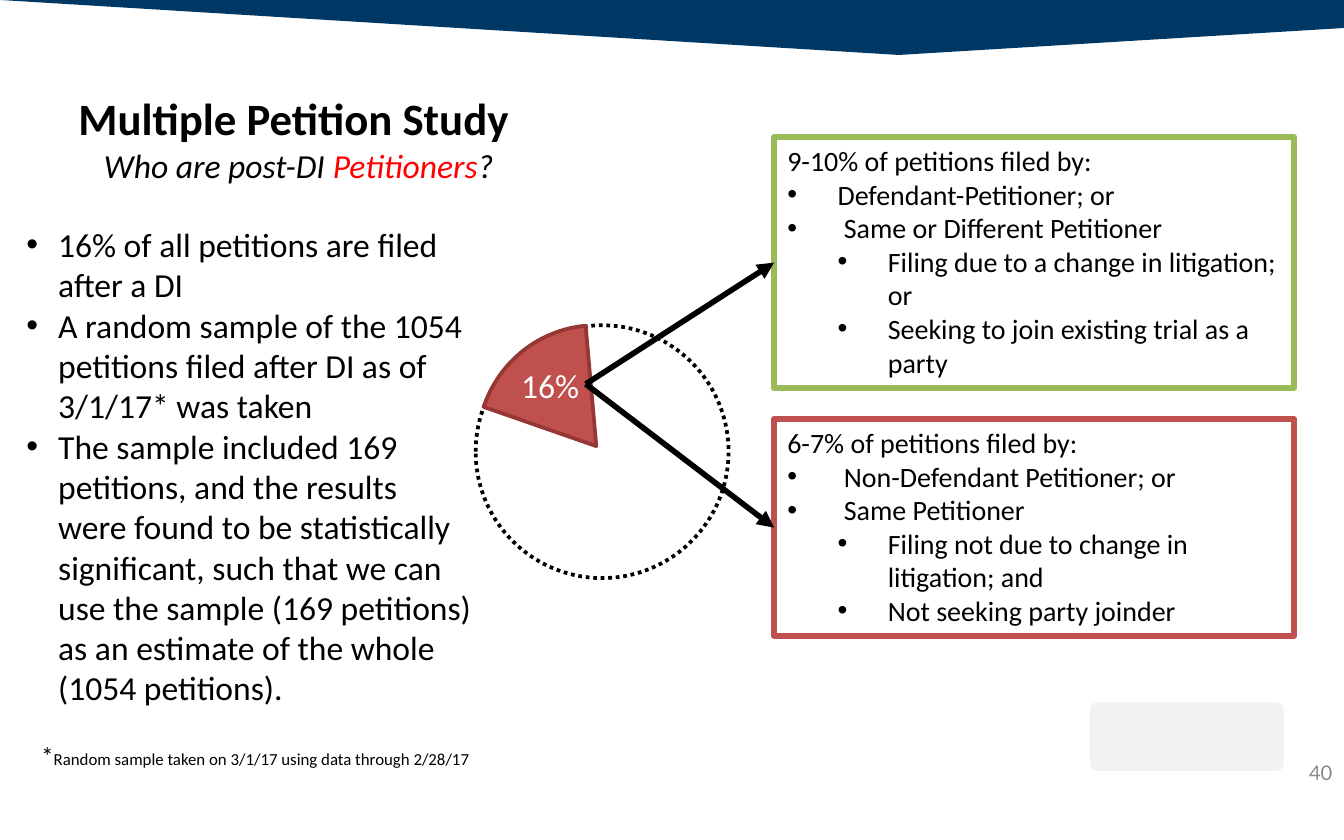
from lxml.etree import SubElement
from pptx import Presentation
from pptx.dml.color import RGBColor
from pptx.enum.dml import MSO_LINE_DASH_STYLE as Dash
from pptx.enum.shapes import MSO_CONNECTOR as Connector, MSO_SHAPE as Shape
from pptx.enum.text import MSO_ANCHOR as Anchor, PP_ALIGN as Align
from pptx.oxml.ns import qn
from pptx.util import Cm, Pt

BLACK, WHITE, RED = "000000", "FFFFFF", "FF0000"
NAVY, BRICK, DARK_BRICK, GREEN = "003865", "C0504D", "953735", "9BBB59"
PALE, GREY = "F2F2F2", "8A8A8A"

# A run is (text, formatting); a paragraph is a list of runs.
TITLE = [
    [("Multiple Petition Study ", dict(size=24, bold=True))],
    [("Who are post-DI ", dict(italic=True)),
     ("Petitioners", dict(italic=True, color=RED)),
     ("?", dict(italic=True))],
]
FINDINGS = [
    "16% of all petitions are filed after a DI",
    "A random sample of the 1054 petitions filed after DI as of 3/1/17* was taken",
    "The sample included 169 petitions, and the results were found to be "
    "statistically significant, such that we can use the sample (169 petitions) "
    "as an estimate of the whole (1054 petitions).",
]
FOOTNOTE = [[("*", dict(size=13.5)),
             ("Random sample taken on 3/1/17 using data through 2/28/17", dict(size=9))]]

# Each group: border colour, top, height, heading, bullets, sub-bullets
GROUPS = [
    (GREEN, 2.59, 4.75, "9-10% of petitions filed by:",
     ["Defendant-Petitioner; or", " Same or Different Petitioner"],
     ["Filing due to a change in litigation; or",
      "Seeking to join existing trial as a party"]),
    (BRICK, 7.92, 4.11, "6-7% of petitions filed by:",
     [" Non-Defendant Petitioner; or", " Same Petitioner"],
     ["Filing not due to change in litigation; and", "Not seeking party joinder"]),
]
GROUP_LEFT, GROUP_WIDTH, GROUP_INDENT = 14.63, 9.83, 0.95
BAND = [(0, 0), (25.4, 0), (25.4, 0.53), (16.99, 1.04)]
ARROW_START = Cm(11.07), Cm(7.26)
PIE_ANGLES = 199.2, 264.98


def rgb(color):
    return RGBColor.from_string(color)


def paint(shape, fill=None, line=None, width=2):
    shape.shadow.inherit = False
    if fill:
        shape.fill.solid()
        shape.fill.fore_color.rgb = rgb(fill)
    else:
        shape.fill.background()
    if line:
        shape.line.color.rgb = rgb(line)
        shape.line.width = Pt(width)
    else:
        shape.line.fill.background()


def add_shape(slide, kind, box, **style):
    shape = slide.shapes.add_shape(kind, *map(Cm, box))
    paint(shape, **style)
    return shape


def write(frame, paragraphs, size=18, color=BLACK, font="Calibri", align=Align.LEFT):
    frame.word_wrap = True
    frame.vertical_anchor = Anchor.TOP
    for number, runs in enumerate(paragraphs):
        paragraph = frame.add_paragraph() if number else frame.paragraphs[0]
        paragraph.alignment = align
        for text, style in runs:
            run = paragraph.add_run()
            run.text = text
            run.font.name = font
            run.font.size = Pt(style.get("size", size))
            run.font.bold = style.get("bold", False)
            run.font.italic = style.get("italic", False)
            run.font.color.rgb = rgb(style.get("color", color))


def add_text(slide, box, paragraphs, **style):
    frame = slide.shapes.add_textbox(*map(Cm, box)).text_frame
    write(frame, paragraphs, **style)
    return frame


def plain(texts):
    return [[(text, {})] for text in texts]


def add_bullet(paragraph, indent, level=0):
    paragraph.level = level
    properties = paragraph._p.get_or_add_pPr()
    properties.set("marL", str(Cm(indent * (level + 1))))
    properties.set("indent", str(-Cm(indent)))
    SubElement(properties, qn("a:buFont"), typeface="Arial")
    SubElement(properties, qn("a:buChar"), char="•")


def add_arrow(slide, target):
    """Draw an arrow from the pie slice to the left side of the target."""
    arrow = slide.shapes.add_connector(Connector.STRAIGHT, *ARROW_START, *ARROW_START)
    arrow.end_connect(target, 1)
    arrow.line.color.rgb = rgb(BLACK)
    arrow.line.width = Pt(3)
    SubElement(arrow.line._get_or_add_ln(), qn("a:tailEnd"), type="triangle")
    SubElement(arrow._element.spPr, qn("a:effectLst"))


def add_group(slide, color, top, height, heading, bullets, sub_bullets):
    box = GROUP_LEFT, top, GROUP_WIDTH, height
    group = add_shape(slide, Shape.RECTANGLE, box, line=color, width=3)
    write(group.text_frame, plain([heading, *bullets, *sub_bullets]), size=15)
    levels = [0] * len(bullets) + [1] * len(sub_bullets)
    for paragraph, level in zip(group.text_frame.paragraphs[1:], levels):
        add_bullet(paragraph, GROUP_INDENT, level)
    return group


def main():
    presentation = Presentation()
    presentation.slide_width, presentation.slide_height = Cm(25.4), Cm(15.88)
    slide = presentation.slides.add_slide(presentation.slide_layouts[6])

    corners = [(Cm(x), Cm(y)) for x, y in BAND]
    builder = slide.shapes.build_freeform(*corners[0])
    builder.add_line_segments(corners[1:])
    paint(builder.convert_to_shape(), fill=NAVY)
    emblem = add_shape(slide, Shape.ROUNDED_RECTANGLE, (20.6, 13.28, 3.66, 1.3), fill=PALE)
    emblem.adjustments[0] = 0.1

    circle = add_shape(slide, Shape.OVAL, (8.99, 6.15, 4.78, 4.78), line=BLACK)
    circle.line.dash_style = Dash.ROUND_DOT
    pie = add_shape(slide, Shape.PIE, (9.02, 6.15, 4.5, 4.57), fill=BRICK, line=DARK_BRICK)
    for number, angle in enumerate(PIE_ANGLES):
        pie.adjustments[number] = angle * 0.6  # 60000ths of a degree over 100000

    add_text(slide, (-1.63, 1.6, 14.55, 3.07), TITLE, align=Align.CENTER)
    add_text(slide, (0.53, 13.87, 20.19, 0.84), FOOTNOTE)
    page = add_text(slide, (24.46, 14.38, 0.94, 0.46), plain(["40"]),
                    size=10.8, color=GREY, font="Lato")
    page.margin_left = Cm(0.28)
    page.margin_top = page.margin_right = page.margin_bottom = 0

    findings = add_text(slide, (0.25, 4.11, 8.92, 9.5), plain(FINDINGS))
    for paragraph in findings.paragraphs:
        add_bullet(paragraph, 0.6)

    for group in [add_group(slide, *group) for group in GROUPS]:
        add_arrow(slide, group)
    label = add_text(slide, (9.6, 6.78, 1.63, 1.02), plain(["16%"]), color=WHITE)
    label.word_wrap = False

    presentation.save("out.pptx")


if __name__ == "__main__":
    main()
